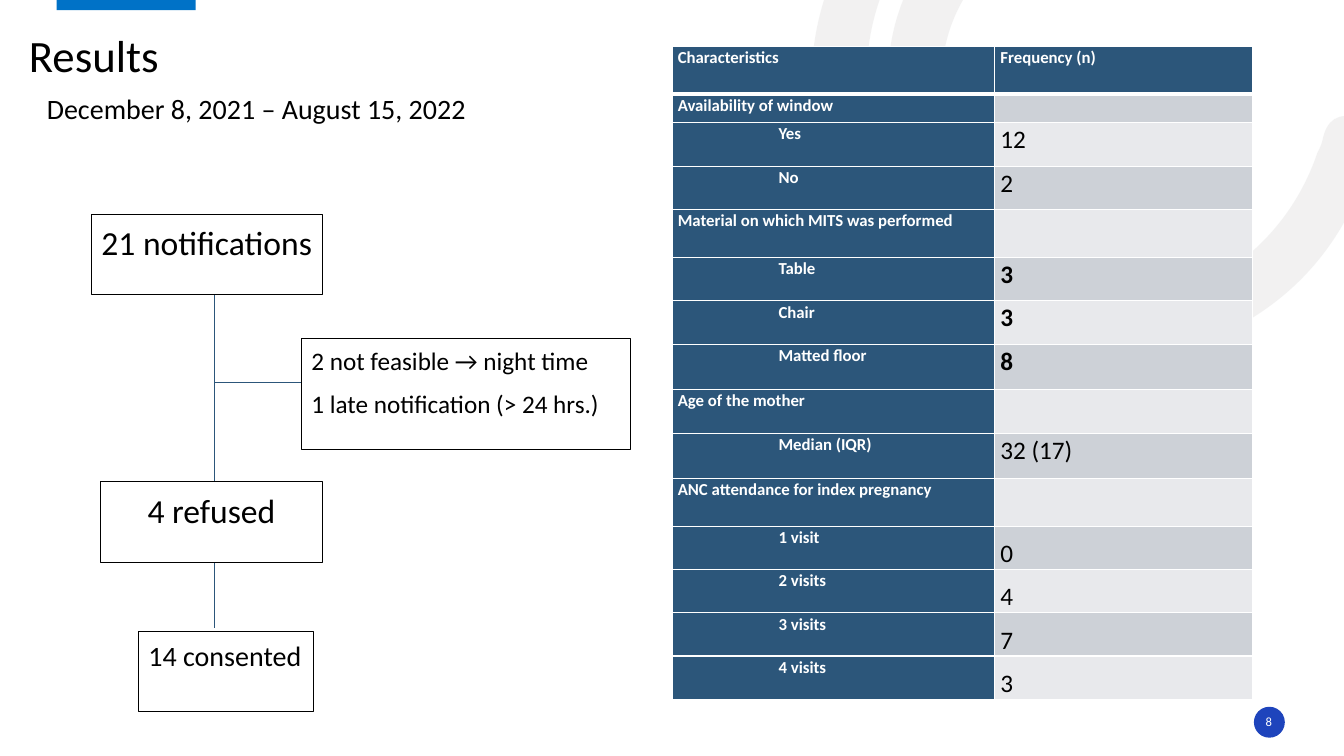
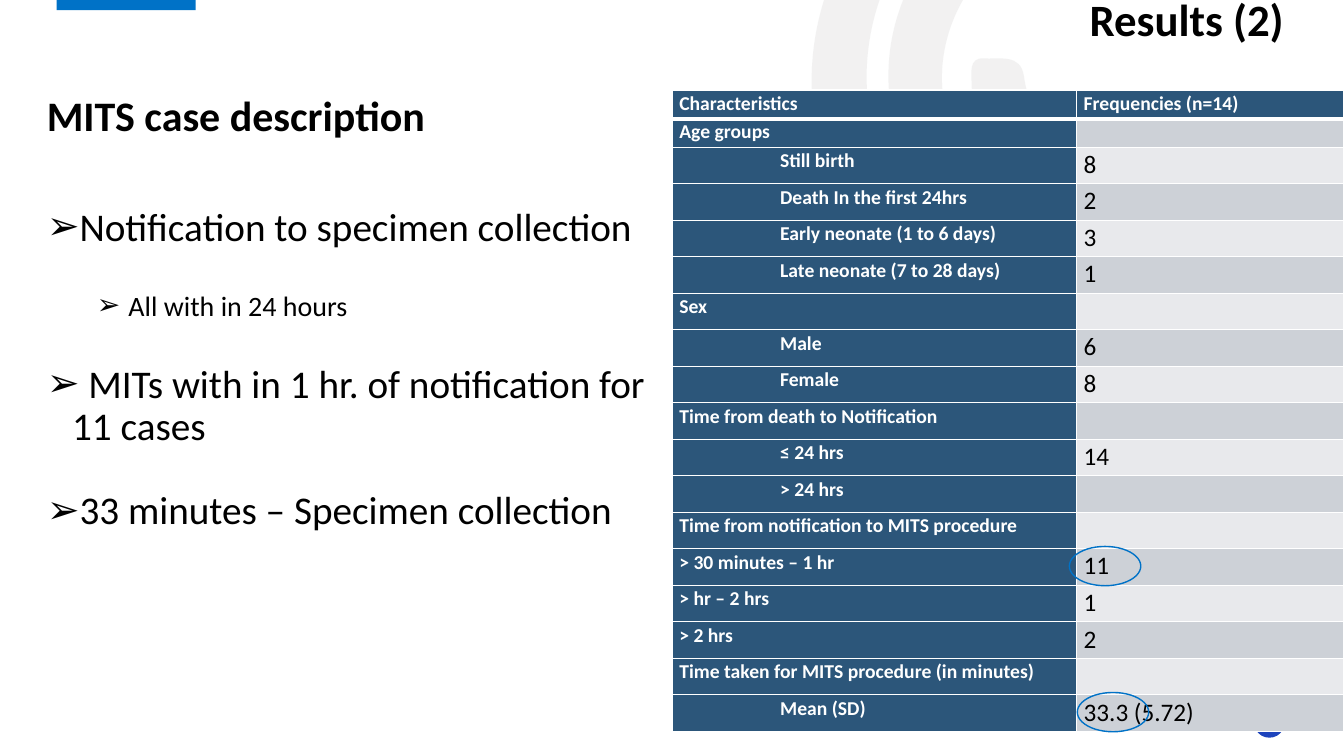
"""Build two results slides: a recruitment flow and case frequency tables."""
from lxml import etree
from pptx import Presentation, util as u
from pptx.dml.color import RGBColor
from pptx.enum import shapes, text
from pptx.oxml.ns import qn


class Theme:
    font = "Calibri"
    black = RGBColor.from_string("000000")
    white = RGBColor.from_string("FFFFFF")
    navy = RGBColor.from_string("2C567A")
    band = RGBColor.from_string("0072C7")
    badge = RGBColor.from_string("1E44BC")
    swirl = RGBColor.from_string("E7E6E6")
    stripes = (RGBColor.from_string("E8E9EC"), RGBColor.from_string("CDD1D7"))
    title, heading, bullet = 32, 30, 28
    step, body, value, number = 24, 20, 18, 9


def write(frame, lines, size, color=Theme.black, bold=False, line=None, before=0, after=0,
          align=text.PP_ALIGN.LEFT, anchor=text.MSO_ANCHOR.TOP, inset=None):
    frame.word_wrap = True
    frame.vertical_anchor = anchor
    if inset is not None:
        frame.margin_left = frame.margin_right = frame.margin_top = frame.margin_bottom = inset
    frame.text = "\n".join(lines)
    for paragraph in frame.paragraphs:
        paragraph.alignment = align
        paragraph.line_spacing = line
        paragraph.space_before, paragraph.space_after = u.Pt(before), u.Pt(after)
        for run in paragraph.runs:
            run.font.name, run.font.size = Theme.font, u.Pt(size)
            run.font.bold, run.font.color.rgb = bold, color


def draw(slide, kind, box, fill=None, line=None, width=0.5):
    shape = slide.shapes.add_shape(kind, *map(u.Cm, box))
    shape.shadow.inherit = False
    if fill is None:
        shape.fill.background()
    else:
        shape.fill.solid()
        shape.fill.fore_color.rgb = fill
    if line is None:
        shape.line.fill.background()
    else:
        shape.line.color.rgb, shape.line.width = line, u.Pt(width)
    return shape


swirls = [
    [(851, 229), (799, 149), (787, 50), (838, -50), (890, -152), (976, -203),
     (1090, -207), (1105, -207), (1121, -210), (1131, -195), (1144, -175),
     (1127, -154), (1098, -154), (967, -154), (865, -59), (860, 68),
     (856, 181), (936, 281), (1046, 302), (1160, 324), (1270, 261), (1307, 152),
     (1309, 148), (1311, 144), (1312, 140), (1316, 119), (1327, 111),
     (1349, 117), (1373, 124), (1367, 141), (1361, 156), (1334, 245),
     (1278, 307), (1191, 341), (1070, 387), (936, 345), (851, 229)],
    [(922, 199), (862, 115), (869, 7), (940, -68), (951, -79), (962, -95),
     (980, -78), (995, -64), (997, -50), (979, -32), (925, 26), (920, 108),
     (965, 168), (1008, 229), (1088, 249), (1161, 215), (1182, 205),
     (1193, 212), (1203, 229), (1213, 250), (1197, 256), (1183, 263),
     (1096, 310), (983, 282), (922, 199)],
    [(987, 151), (975, 130), (964, 107), (964, 82), (964, 73), (961, 57),
     (976, 58), (992, 59), (1013, 53), (1016, 76), (1021, 110), (1036, 132),
     (1067, 148), (1088, 157), (1076, 176), (1072, 189), (1068, 206),
     (1055, 198), (1045, 194), (1021, 187), (1003, 170), (987, 151)],
]

prs = Presentation()
prs.slide_width, prs.slide_height = u.Cm(33.87), u.Cm(19.05)
flow, cases = [prs.slides.add_slide(prs.slide_layouts[6]) for _ in range(2)]

for slide in (flow, cases):
    for start, *points in swirls:
        builder = slide.shapes.build_freeform(*start, scale=int(u.Cm(2.54)) / 100)
        builder.add_line_segments(points)
        arc = builder.convert_to_shape()
        corners = list(arc.element.spPr.iter(qn("a:lnTo")))
        for i in range(0, len(corners), 3):
            curve = etree.Element(qn("a:cubicBezTo"))
            corners[i].addprevious(curve)
            for corner in corners[i:i + 3]:
                curve.append(corner[0])
                corner.getparent().remove(corner)
        arc.shadow.inherit = False
        arc.line.fill.background()
        arc.fill.solid()
        arc.fill.fore_color.rgb = Theme.swirl
        tint = arc.element.spPr.find(".//" + qn("a:srgbClr"))
        etree.SubElement(tint, qn("a:alpha"), val="53000")
    draw(slide, shapes.MSO_SHAPE.RECTANGLE, (1.43, -0.05, 3.5, 0.31), Theme.band)
    draw(slide, shapes.MSO_SHAPE.OVAL, (31.6, 17.81, 0.78, 0.78), Theme.badge)

number = flow.shapes.add_textbox(u.Cm(31.57), u.Cm(17.93), u.Cm(0.81), u.Cm(0.51))
write(number.text_frame, ["8"], Theme.number, Theme.white, inset=0,
      align=text.PP_ALIGN.CENTER, anchor=text.MSO_ANCHOR.MIDDLE)
period = flow.shapes.add_textbox(u.Cm(0.93), u.Cm(2.27), u.Cm(15.2), u.Cm(16.76))
write(period.text_frame, ["December 8, 2021 – August 15, 2022"], Theme.body, line=0.9, before=10)
results = flow.shapes.add_textbox(u.Cm(0.48), u.Cm(0.58), u.Cm(17.35), u.Cm(1.63))
write(results.text_frame, ["Results"], Theme.title)

trunk = 5.4
for ends in ((trunk, 7.42, trunk, 12.14), (8.61, 9.64, trunk, 9.64), (trunk, 14.17, trunk, 15.82)):
    link = flow.shapes.add_connector(shapes.MSO_CONNECTOR.STRAIGHT, *map(u.Cm, ends))
    link.line.color.rgb, link.line.width = Theme.navy, u.Pt(0.5)
    etree.SubElement(link.element.spPr, qn("a:effectLst"))

center, left = text.PP_ALIGN.CENTER, text.PP_ALIGN.LEFT
for box, lines, size, align in (
    ((2.3, 5.39, 5.82, 2.03), ["21 notifications"], Theme.step, center),
    ((7.6, 8.52, 8.28, 2.8), ["2 not feasible → night time", "1 late notification (> 24 hrs.)"],
     Theme.value, left),
    ((2.54, 12.14, 5.58, 2.03), ["4 refused"], Theme.step, center),
    ((3.49, 15.9, 4.4, 2.03), ["14 consented"], Theme.body, left),
):
    stage = draw(flow, shapes.MSO_SHAPE.RECTANGLE, box, Theme.white, Theme.black)
    write(stage.text_frame, lines, size, line=1.07, after=8, align=align)

findings = cases.shapes.add_textbox(u.Cm(0.93), u.Cm(2.27), u.Cm(16), u.Cm(16.78))
write(findings.text_frame,
      ["MITS case description", "Notification to specimen collection", " All with in 24 hours",
       " MITs with in 1 hr. of notification for 11 cases", "33 minutes – Specimen collection"],
      Theme.bullet, line=0.9, before=6, after=24)
heading, *points = findings.text_frame.paragraphs
heading.space_before, heading.space_after = u.Pt(10), u.Pt(42)
heading.runs[0].font.size, heading.runs[0].font.bold = u.Pt(Theme.heading), True
for order, point in enumerate(points):
    nested = order == 1
    if nested:
        point.level = 1
        point.runs[0].font.size = u.Pt(Theme.body)
    properties = point._p.get_or_add_pPr()
    properties.set("marL", str(u.Cm(1.9 if nested else 0.64)))
    properties.set("indent", str(u.Cm(-0.64)))
    etree.SubElement(properties, qn("a:buFont"), typeface=Theme.font)
    etree.SubElement(properties, qn("a:buChar"), char="➢")

title = cases.shapes.add_textbox(u.Cm(27.46), u.Cm(0.03), u.Cm(6.41), u.Cm(1.14))
write(title.text_frame, ["Results (2)"], Theme.title, bold=True, line=0.9, inset=0,
      anchor=text.MSO_ANCHOR.BOTTOM)

section, item = False, True
household = [
    (section, "Characteristics", "Frequency (n)", 1.2),
    (section, "Availability of window", "", 0.71),
    (item, "Yes", "12", 1.11),
    (item, "No", "2", 1.09),
    (section, "Material on which MITS was performed", "", 1.21),
    (item, "Table", "3", 1.09),
    (item, "Chair", "3", 1.1),
    (item, "Matted floor", "8", 1.13),
    (section, "Age of the mother", "", 1.11),
    (item, "Median (IQR)", "32 (17)", 1.13),
    (section, "ANC attendance for index pregnancy", "", 1.21),
    (item, "1 visit", "0", 1.09),
    (item, "2 visits", "4", 1.09),
    (item, "3 visits", "7", 1.09),
    (item, "4 visits", "3", 1.09),
]
timing = [
    (section, "Characteristics", "Frequencies (n=14)", 0.72),
    (section, "Age groups", "", 0.72),
    (item, "Still birth", "8", 0.92),
    (item, "Death In the first 24hrs", "2", 0.92),
    (item, "Early neonate (1 to 6 days)", "3", 0.92),
    (item, "Late neonate (7 to 28 days)", "1", 0.92),
    (section, "Sex", "", 0.92),
    (item, "Male", "6", 0.92),
    (item, "Female", "8", 0.92),
    (section, "Time from death to Notification", "", 0.92),
    (item, "≤ 24 hrs", "14", 0.92),
    (item, "> 24 hrs", "", 0.92),
    (section, "Time from notification to MITS procedure", "", 0.92),
    (section, "> 30 minutes – 1 hr", "11", 0.92),
    (section, "> hr – 2 hrs", "1", 0.92),
    (section, "> 2 hrs", "2", 0.92),
    (section, "Time taken for MITS procedure (in minutes)", "", 0.92),
    (item, "Mean (SD)", "33.3 (5.72)", 0.92),
]

for slide, rows, top, widths, label_size, margin, bold_rows, low_rows in (
    (flow, household, 1.17, (8.13, 6.5), 12, 0.14, range(5, 8), range(11, 15)),
    (cases, timing, 2.27, (10.19, 6.74), 14, 0.18, (), ()),
):
    grid = slide.shapes.add_table(len(rows), 2, u.Cm(16.94), u.Cm(top), u.Cm(sum(widths)),
                                  u.Cm(sum(row[3] for row in rows))).table
    grid.first_row = grid.horz_banding = False
    for column, width in zip(grid.columns, widths):
        column.width = u.Cm(width)
    for r, (indented, label, value, height) in enumerate(rows):
        grid.rows[r].height = u.Cm(height)
        for c, words in enumerate((label, value)):
            cell = grid.cell(r, c)
            dark = r == 0 or c == 0
            size = label_size if dark else Theme.value
            write(cell.text_frame, [words], size, Theme.white if dark else Theme.black,
                  dark or r in bold_rows, line=1.07)
            cell.margin_left = cell.margin_right = u.Cm(margin)
            cell.margin_top = cell.margin_bottom = 0
            cell.vertical_anchor = (text.MSO_ANCHOR.BOTTOM if c == 1 and r in low_rows
                                    else text.MSO_ANCHOR.TOP)
            paragraph = cell.text_frame.paragraphs[0]._p
            if indented and c == 0:
                paragraph.get_or_add_pPr().set("marL", str(u.Cm(2.54)))
            if not words:
                etree.SubElement(paragraph, qn("a:endParaRPr"), sz=str(label_size * 100))
            borders = cell._tc.get_or_add_tcPr()
            for side in "LRTB":
                thick = (r, side) in ((0, "B"), (1, "T"))
                edge = etree.SubElement(borders, qn("a:ln" + side), w=str(u.Pt(3 if thick else 1)))
                paint = etree.SubElement(edge, qn("a:solidFill"))
                etree.SubElement(paint, qn("a:srgbClr"), val=str(Theme.white))
            cell.fill.solid()
            cell.fill.fore_color.rgb = Theme.navy if dark else Theme.stripes[r % 2]

for x, y in ((26.95, 13.77), (27.15, 17.45)):
    draw(cases, shapes.MSO_SHAPE.OVAL, (x, y, 1.8, 0.99), line=Theme.band, width=1)

prs.save("out.pptx")
